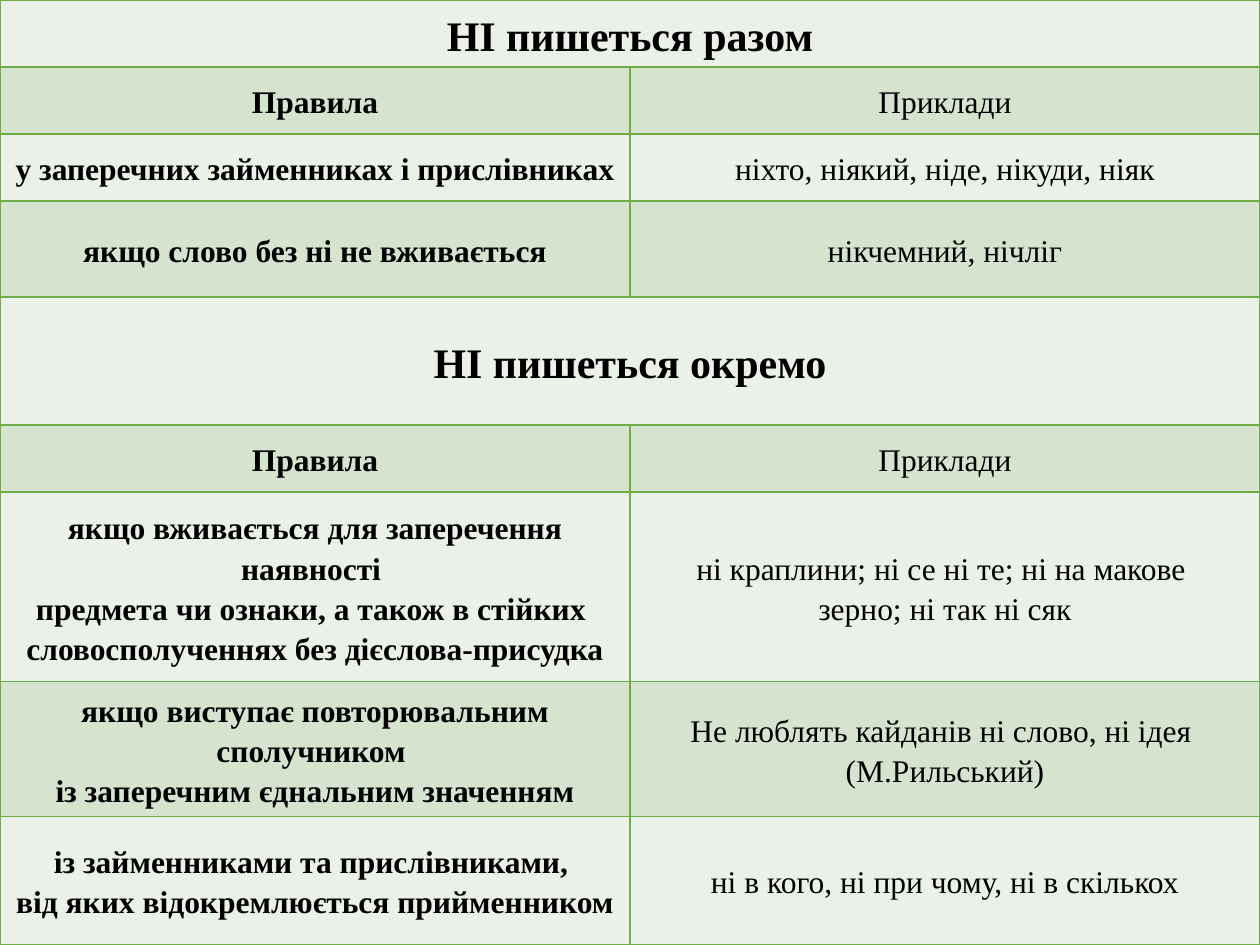
from lxml.etree import SubElement
from pptx import Presentation
from pptx.dml.color import RGBColor
from pptx.enum.text import MSO_ANCHOR, PP_ALIGN
from pptx.oxml.ns import qn
from pptx.util import Pt

BLACK = RGBColor(0x00, 0x00, 0x00)
GREEN = RGBColor(0x70, 0xAD, 0x47)
PALE_GREEN = RGBColor(0xEB, 0xF1, 0xE9)
LIGHT_GREEN = RGBColor(0xD5, 0xE3, 0xCF)
FONT_NAME = "Times New Roman"
HEADING_SIZE, BODY_SIZE = 24, 18
CELL_MARGIN = 1.5
PARAGRAPH_MARK, LINE_MARK = "\n", "\v"

COLUMN_TITLES = ("Правила", "Приклади")
RULE_ROWS = [
    (38.3, ("НІ пишеться разом",)),
    (38.3, COLUMN_TITLES),
    (38.3, ("у заперечних займенниках і прислівниках",
            "ніхто, ніякий, ніде, нікуди, ніяк")),
    (54.8, ("якщо слово без ні не вживається", "нікчемний, нічліг")),
    (73.2, ("НІ пишеться окремо",)),
    (38.3, COLUMN_TITLES),
    (108.3, ("якщо вживається для заперечення наявності \v"
             "предмета чи ознаки, а також в стійких \v"
             "словосполученнях без дієслова-присудка",
             "ні краплини; ні се ні те; ні на макове \v"
             "зерно; ні так ні сяк")),
    (77.2, ("якщо виступає повторювальним сполучником \v"
            "із заперечним єднальним значенням",
            "Не люблять кайданів ні слово, ні ідея \n(М.Рильський)")),
    (73.2, ("із займенниками та прислівниками, \v"
            "від яких відокремлюється прийменником",
            "ні в кого, ні при чому, ні в скількох")),
]


def add_borders(cell):
    """Draw a one-point green line on every side of the cell."""
    properties = cell._tc.get_or_add_tcPr()
    for position, side in enumerate(("a:lnL", "a:lnR", "a:lnT", "a:lnB")):
        line = SubElement(properties, qn(side), w=str(Pt(1)))
        fill = SubElement(line, qn("a:solidFill"))
        SubElement(fill, qn("a:srgbClr"), val=str(GREEN))
        properties.insert(position, line)


def format_cell(cell, color):
    """Set the fill, borders, margins and anchor of a cell."""
    cell.fill.solid()
    cell.fill.fore_color.rgb = color
    add_borders(cell)
    cell.margin_left = cell.margin_right = Pt(CELL_MARGIN)
    cell.margin_top = cell.margin_bottom = Pt(CELL_MARGIN)
    cell.vertical_anchor = MSO_ANCHOR.MIDDLE


def write_text(cell, text, size, bold):
    """Write centred paragraphs with their line breaks into a cell."""
    frame = cell.text_frame
    for number, content in enumerate(text.split(PARAGRAPH_MARK)):
        paragraph = frame.add_paragraph() if number else frame.paragraphs[0]
        paragraph.alignment = PP_ALIGN.CENTER
        paragraph.line_spacing = 1.15
        for line_number, line in enumerate(content.split(LINE_MARK)):
            if line_number:
                paragraph.add_line_break()
            run = paragraph.add_run()
            run.text = line
            run.font.name = FONT_NAME
            run.font.size = Pt(size)
            run.font.bold = bold
            run.font.color.rgb = BLACK


def add_rules_table(slide, left, top, width):
    """Place the table of spelling rules with its two section headings."""
    height = sum(row_height for row_height, _ in RULE_ROWS)
    table = slide.shapes.add_table(
        len(RULE_ROWS), 2, Pt(left), Pt(top), Pt(width), Pt(height)).table
    table.first_row = table.horz_banding = False
    for column in table.columns:
        column.width = Pt(width / 2)
    for row_number, (row_height, texts) in enumerate(RULE_ROWS):
        table.rows[row_number].height = Pt(row_height)
        cells = [table.cell(row_number, column) for column in range(2)]
        for cell in cells:
            format_cell(cell, LIGHT_GREEN if row_number % 2 else PALE_GREEN)
        is_heading = len(texts) == 1
        if is_heading:
            cells[0].merge(cells[1])
        size = HEADING_SIZE if is_heading else BODY_SIZE
        for column, (cell, text) in enumerate(zip(cells, texts)):
            write_text(cell, text, size, bold=column == 0)


def main():
    """Build and save the presentation."""
    presentation = Presentation()
    presentation.slide_width, presentation.slide_height = Pt(720), Pt(540)
    slide = presentation.slides.add_slide(presentation.slide_layouts[6])
    add_rules_table(slide, 0, 0, 720)
    presentation.save("out.pptx")


if __name__ == "__main__":
    main()
